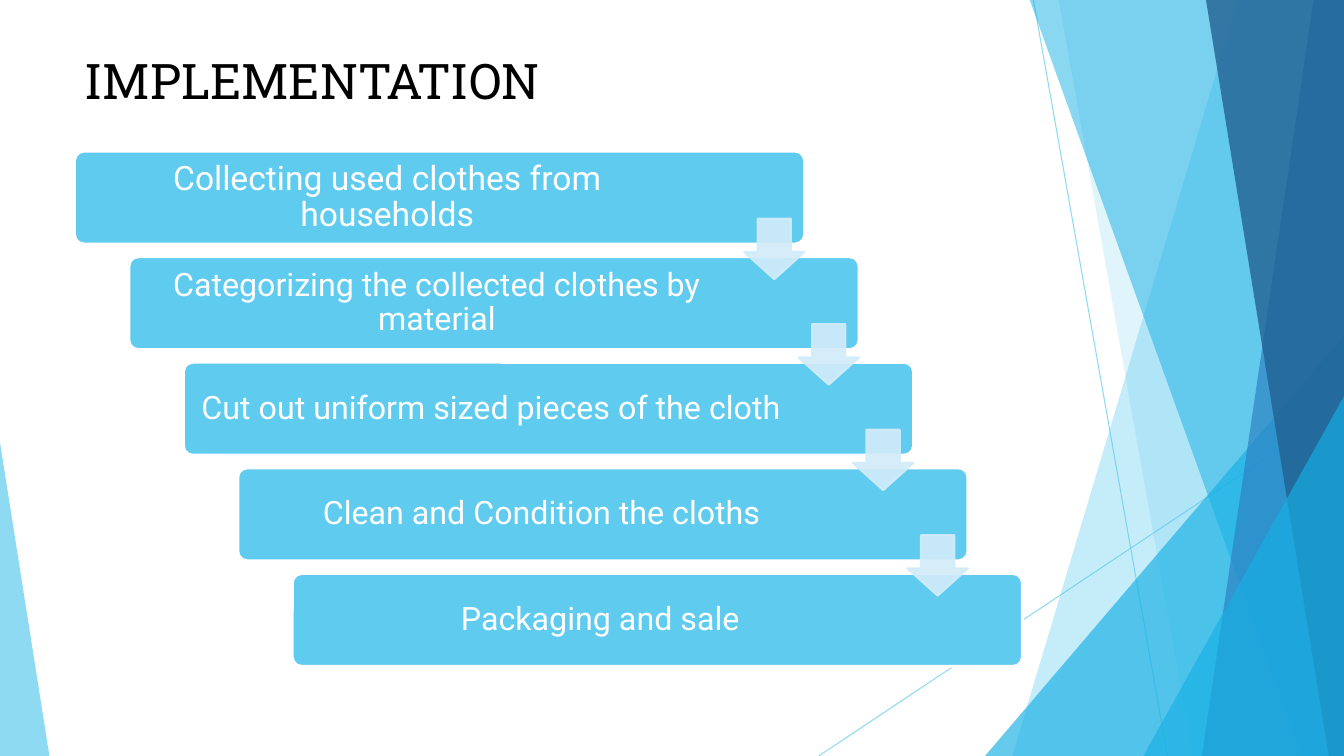
import pptx
import pptx.util
import pptx.dml.color
import pptx.enum.shapes
import pptx.enum.text
import pptx.oxml
import pptx.oxml.ns

Inches = pptx.util.Inches
SHAPE = pptx.enum.shapes.MSO_SHAPE
ALIGN = pptx.enum.text.PP_ALIGN
ANCHOR = pptx.enum.text.MSO_ANCHOR

TITLE = "IMPLEMENTATION"
STEPS = [
    ("Collecting used clothes from households", 6.14, "step_first"),
    ("Categorizing the collected clothes by material", 6.05, "step"),
    ("Cut out uniform sized pieces of the cloth", 6.05, "step"),
    ("Clean and Condition the cloths ", 6.05, "step"),
    ("Packaging and sale", 6.05, "step"),
]

THEME = {
    "sky": "5FCBEF",
    "cyan": "17B0E4",
    "blue": "2E83C3",
    "navy": "226292",
    "pale": "D2ECF9",
    "white": "FFFFFF",
    "black": "000000",
    "title": {"name": "Roboto Slab", "size": 35, "color": "black"},
    "step_first": {"name": "Roboto", "size": 24, "color": "white"},
    "step": {"name": "Roboto", "size": 23, "color": "white"},
}

W, H = 13.33, 7.5
TOP = -0.01
RAYS = [((10.25, 0), (11.58, H)), ((W, 4.03), (8.12, H))]
FACETS = [
    ("band", 12.28, 10.04, "sky", 36),
    ("band", 10.5, 11.83, "sky", 20),
    ("triangle", (9.77, 3.33, 3.56, 4.17), 1, "cyan", 66),
    ("band", 10.21, 12.91, "cyan", 50),
    ("band", 13.03, 11.92, "blue", 70),
    ("band", 11.96, 13.18, "navy", 80),
    ("triangle", (11.34, 3.93, 1.99, 3.57), 1, "cyan", 66),
    ("triangle", (0, 4.39, 0.49, 3.11), 0, "sky", 70),
]

STEP_LEFT, STEP_SHIFT = 0.74, 0.54
STEP_TOP, STEP_LAST = 1.5, 5.69
STEP_W, STEP_H, STEP_PAD = 7.24, 0.92, 0.03
ARROW_TOP, ARROW_LAST, ARROW_SIZE = 2.17, 5.31, 0.6


def rgb(key):
    return pptx.dml.color.RGBColor.from_string(THEME[key])


def box(*lengths):
    return [Inches(v) for v in lengths]


def fade(fmt, percent):
    clr = fmt._xPr.find(".//" + pptx.oxml.ns.qn("a:srgbClr"))
    alpha = pptx.oxml.parse_xml(
        f'<a:alpha {pptx.oxml.ns.nsdecls("a")} val="{percent * 1000}"/>')
    clr.append(alpha)


def paint(sp, color, alpha=100, line=None, width=0):
    sp.shadow.inherit = False
    sp.fill.solid()
    sp.fill.fore_color.rgb = rgb(color)
    if alpha < 100:
        fade(sp.fill, alpha)
    if line is None:
        sp.line.fill.background()
        return
    sp.line.width = pptx.util.Pt(width)
    sp.line.color.rgb = rgb(line)
    if alpha < 100:
        fade(sp.line.fill, alpha)


def add_preset(s, kind, place, adjustments):
    sp = s.shapes.add_shape(kind, *box(*place))
    for i, value in enumerate(adjustments):
        sp.adjustments[i] = value
    return sp


def add_band(s, top_x, bottom_x):
    fb = s.shapes.build_freeform(Inches(top_x), Inches(TOP), scale=1.0)
    fb.add_line_segments(
        [box(W, TOP), box(W, H), box(bottom_x, H)], close=True)
    return fb.convert_to_shape()


def add_ray(s, start, end):
    c = s.shapes.add_connector(
        pptx.enum.shapes.MSO_CONNECTOR.STRAIGHT, *box(*start, *end))
    c.line.width = pptx.util.Pt(0.75)
    c.line.color.rgb = rgb("sky")
    fade(c.line.fill, 70)
    c._element.spPr.append(pptx.oxml.parse_xml(
        f'<a:effectLst {pptx.oxml.ns.nsdecls("a")}/>'))


def add_text(s, text, place, style, frame, para):
    tf = s.shapes.add_textbox(*box(*place)).text_frame
    for name, value in frame.items():
        setattr(tf, name, value)
    p = tf.paragraphs[0]
    for name, value in para.items():
        setattr(p, name, value)
    r = p.add_run()
    r.text = text
    font = THEME[style]
    for name, value in {"name": font["name"],
                        "size": pptx.util.Pt(font["size"])}.items():
        setattr(r.font, name, value)
    r.font.color.rgb = rgb(font["color"])


def add_backdrop(s):
    for start, end in RAYS:
        add_ray(s, start, end)
    for kind, first, second, color, alpha in FACETS:
        if kind == "band":
            sp = add_band(s, first, second)
        else:
            sp = add_preset(s, SHAPE.ISOSCELES_TRIANGLE, first, [second])
        paint(sp, color, alpha)


def add_steps(s):
    frame = {"word_wrap": True, "vertical_anchor": ANCHOR.MIDDLE}
    for side in ("left", "right", "top", "bottom"):
        frame["margin_" + side] = Inches(0.1)
    para = {"alignment": ALIGN.CENTER, "line_spacing": 0.9}
    pitch = (STEP_LAST - STEP_TOP) / (len(STEPS) - 1)
    for i, (text, width, style) in enumerate(STEPS):
        x, y = STEP_LEFT + i * STEP_SHIFT, STEP_TOP + i * pitch
        sp = add_preset(s, SHAPE.ROUNDED_RECTANGLE,
                        (x, y, STEP_W, STEP_H), [0.1])
        paint(sp, "sky", line="white", width=2)
        place = (x + STEP_PAD, y + STEP_PAD, width, STEP_H - 2 * STEP_PAD)
        add_text(s, text, place, style, frame, para)


def add_arrows(s):
    count = len(STEPS) - 1
    pitch = (ARROW_LAST - ARROW_TOP) / (count - 1)
    for i in range(count):
        x = STEP_LEFT + STEP_W - ARROW_SIZE + i * STEP_SHIFT
        place = (x, ARROW_TOP + i * pitch, ARROW_SIZE, ARROW_SIZE)
        sp = add_preset(s, SHAPE.DOWN_ARROW, place, [0.55, 0.45])
        paint(sp, "pale", 90, line="pale", width=1.5)


def main():
    prs = pptx.Presentation()
    prs.slide_width, prs.slide_height = box(W, H)
    s = prs.slides.add_slide(prs.slide_layouts[6])
    add_backdrop(s)
    add_text(s, TITLE, (0.74, 0.45, 9.4, 0.69), "title",
             {"word_wrap": True, "vertical_anchor": ANCHOR.MIDDLE},
             {"alignment": ALIGN.LEFT})
    add_steps(s)
    add_arrows(s)
    prs.save("out.pptx")


if __name__ == "__main__":
    main()
